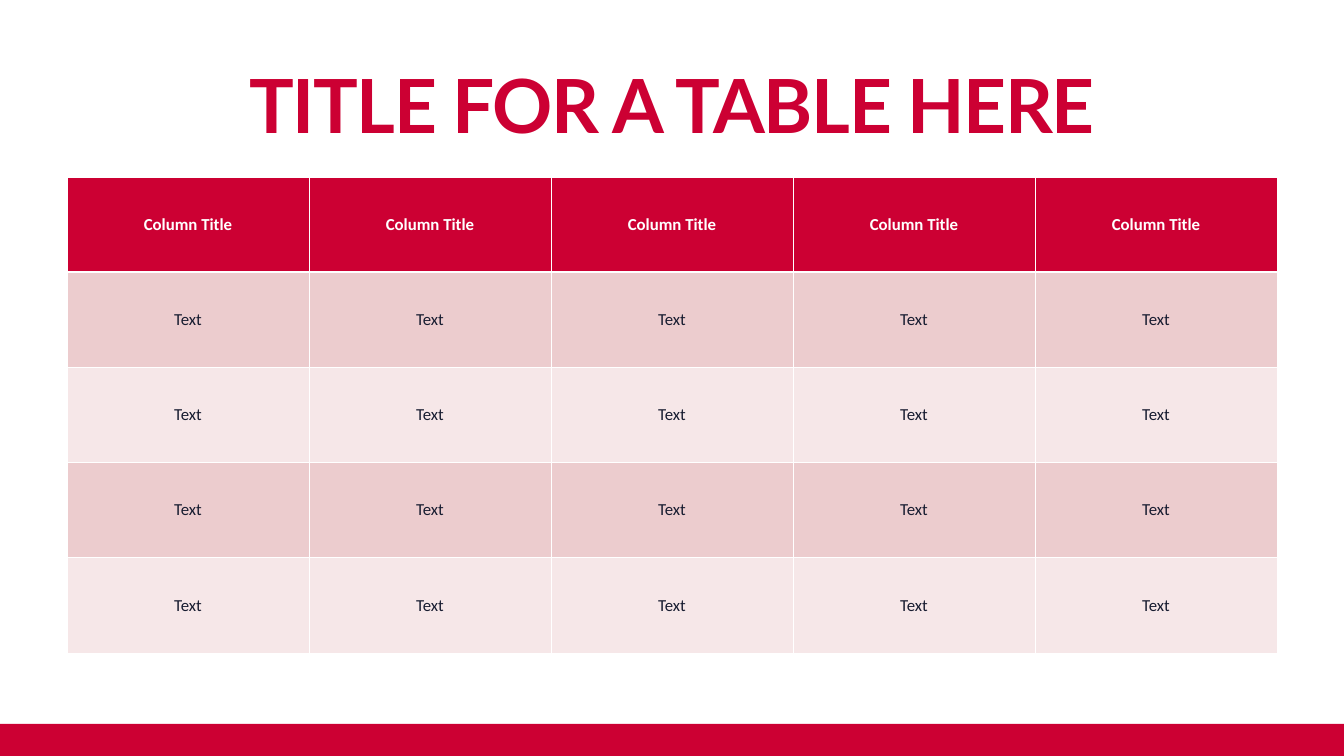
"""Build a slide with a title, a banded table and a footer bar."""
from lxml import etree
from pptx import Presentation
from pptx.dml.color import RGBColor
from pptx.enum.shapes import MSO_SHAPE
from pptx.enum.text import MSO_ANCHOR, PP_ALIGN
from pptx.oxml.ns import qn
from pptx.util import Emu, Pt

RECTANGLE = MSO_SHAPE.RECTANGLE
TOP, MIDDLE = MSO_ANCHOR.TOP, MSO_ANCHOR.MIDDLE
CENTER = PP_ALIGN.CENTER

RED = RGBColor(0xCC, 0x00, 0x33)
WHITE = RGBColor(0xFF, 0xFF, 0xFF)
NAVY = RGBColor(0x17, 0x1C, 0x30)
PINK = RGBColor(0xEC, 0xCC, 0xCE)
PALE_PINK = RGBColor(0xF6, 0xE7, 0xE8)

TITLE = "TITLE FOR A TABLE HERE"
ROWS = [["Column Title"] * 5] + [["Text"] * 5] * 4
BANDS = [PINK, PALE_PINK]

SLIDE_W, SLIDE_H = 1344, 756
BAR_H = 32
MARGIN = 67
CONTENT_W = 1210
TITLE_TOP, TITLE_H = 69, 77
TABLE_TOP, TABLE_H = 177, 476


def px(length):
    return Emu(round(length * 914400 / 67.2))


def style(paragraph, font_name, size, color, bold):
    paragraph.alignment = CENTER
    font = paragraph.font
    font.name, font.size, font.bold = font_name, Pt(size), bold
    font.color.rgb = color


def add_footer_bar(slide):
    bar = slide.shapes.add_shape(
        RECTANGLE, 0, px(SLIDE_H - BAR_H), px(SLIDE_W), px(BAR_H))
    bar.shadow.inherit = False
    bar.fill.solid()
    bar.fill.fore_color.rgb = RED
    bar.line.fill.background()


def add_title(slide):
    frame = slide.shapes.add_textbox(
        px(MARGIN), px(TITLE_TOP), px(CONTENT_W), px(TITLE_H)).text_frame
    frame.word_wrap = True
    frame.vertical_anchor = TOP
    frame.margin_left = frame.margin_right = 0
    heading = frame.paragraphs[0]
    run = heading.add_run()
    run.text = TITLE
    style(heading, "Lato", 80, RED, True)
    heading.line_spacing = Pt(82)
    run.font.bold = True
    run._r.get_or_add_rPr().set("spc", "-150")


def set_borders(cell, widths):
    properties = cell._tc.get_or_add_tcPr()
    for index, (side, width) in enumerate(widths.items()):
        border = etree.Element(qn(f"a:ln{side}"), w=str(Pt(width)))
        fill = etree.SubElement(border, qn("a:solidFill"))
        etree.SubElement(fill, qn("a:srgbClr"), val=str(WHITE))
        properties.insert(index, border)


def add_table(slide):
    table = slide.shapes.add_table(
        len(ROWS), len(ROWS[0]),
        px(MARGIN), px(TABLE_TOP), px(CONTENT_W), px(TABLE_H)).table
    for column in table.columns:
        column.width = px(CONTENT_W / len(ROWS[0]))
    for row in table.rows:
        row.height = px(TABLE_H / len(ROWS))
    for r, texts in enumerate(ROWS):
        header = r == 0
        for c, text in enumerate(texts):
            cell = table.cell(r, c)
            cell.text = text
            cell.vertical_anchor = MIDDLE
            cell.fill.solid()
            cell.fill.fore_color.rgb = RED if header else BANDS[(r - 1) % 2]
            style(cell.text_frame.paragraphs[0], "Calibri", 18,
                  WHITE if header else NAVY, header)
            set_borders(cell, {"L": 1, "R": 1, "T": 3 if r == 1 else 1,
                               "B": 3 if header else 1})


def main():
    deck = Presentation()
    deck.slide_width, deck.slide_height = px(SLIDE_W), px(SLIDE_H)
    slide = deck.slides.add_slide(deck.slide_layouts[6])
    add_footer_bar(slide)
    add_title(slide)
    add_table(slide)
    deck.save("out.pptx")


if __name__ == "__main__":
    main()
